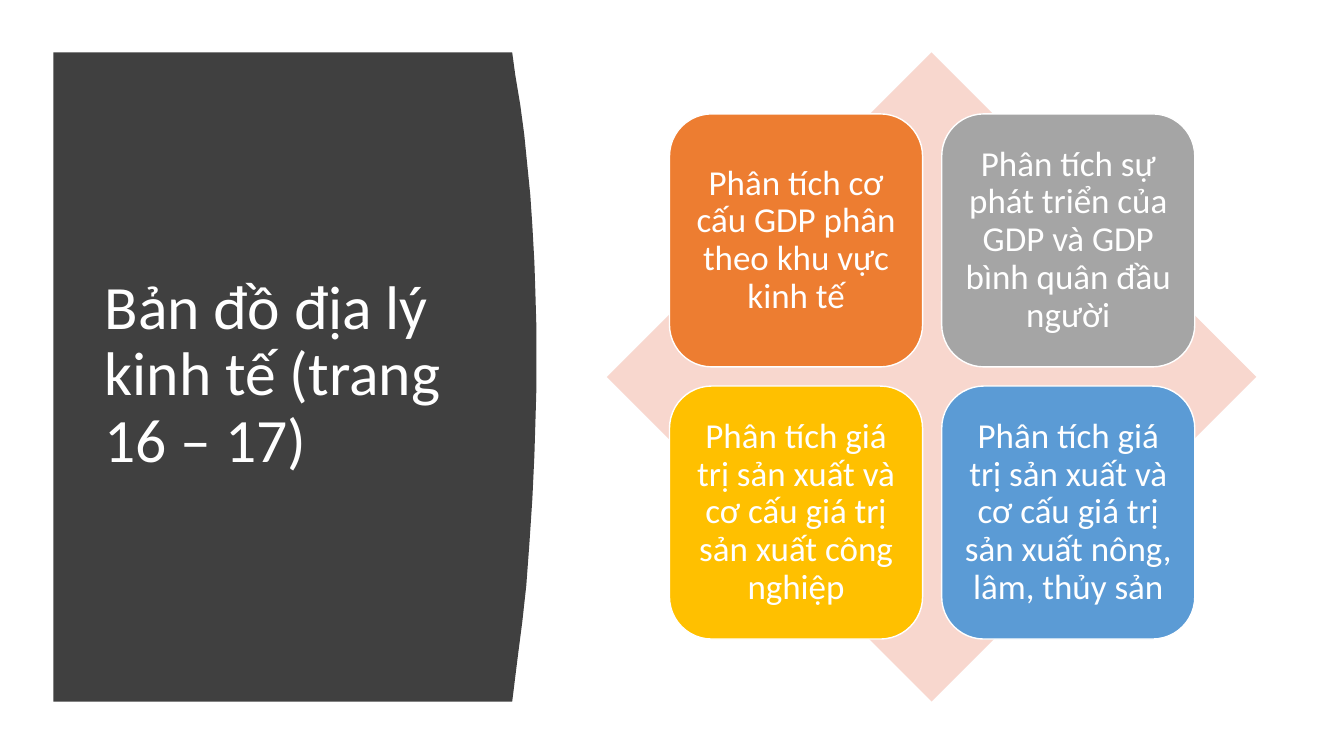
from pptx import Presentation
from pptx.dml.color import RGBColor
from pptx.enum.shapes import MSO_SHAPE
from pptx.enum.text import MSO_ANCHOR, PP_ALIGN
from pptx.util import Inches, Pt

DIAMOND = MSO_SHAPE.DIAMOND
ROUNDED = MSO_SHAPE.ROUNDED_RECTANGLE
MIDDLE = MSO_ANCHOR.MIDDLE
LEFT, CENTER = PP_ALIGN.LEFT, PP_ALIGN.CENTER

WHITE = RGBColor(0xFF, 0xFF, 0xFF)
CHARCOAL = RGBColor(0x40, 0x40, 0x40)
BLUSH = RGBColor(0xF8, 0xD7, 0xCE)
ORANGE = RGBColor(0xED, 0x7D, 0x31)
GRAY = RGBColor(0xA5, 0xA5, 0xA5)
GOLD = RGBColor(0xFF, 0xC0, 0x00)
BLUE = RGBColor(0x5B, 0x9B, 0xD5)

PANEL_OUTLINE = [
    (0.53, 0.52), (5.08, 0.52), (5.11, 0.74), (5.16, 1.04), (5.2, 1.34),
    (5.23, 1.64), (5.26, 1.94), (5.28, 2.24), (5.3, 2.6), (5.31, 2.9),
    (5.32, 3.25), (5.32, 3.85), (5.31, 4.2), (5.3, 4.52), (5.28, 4.95),
    (5.25, 5.4), (5.22, 5.81), (5.18, 6.17), (5.14, 6.48), (5.11, 6.72),
    (5.08, 6.96), (0.53, 6.96),
]
TOPICS = [
    ("Phân tích cơ cấu GDP phân theo khu vực kinh tế", ORANGE),
    ("Phân tích sự phát triển của GDP và GDP bình quân đầu người", GRAY),
    ("Phân tích giá trị sản xuất và cơ cấu giá trị sản xuất công nghiệp", GOLD),
    ("Phân tích giá trị sản xuất và cơ cấu giá trị sản xuất nông, lâm, thủy sản", BLUE),
]
GRID_LEFT, GRID_TOP, CARD_SIZE, CARD_PITCH = 6.64, 1.13, 2.51, 2.7


class SlideBuilder:
    """Draws styled elements on the current slide."""

    font_name = "Calibri"
    text_color = WHITE
    line_spacing = 0.9

    def __init__(self, slide):
        self.slide = slide

    def paint(self, shape, fill, line=None):
        """Set the fill and the outline of a shape."""
        shape.shadow.inherit = False
        shape.fill.solid()
        shape.fill.fore_color.rgb = fill
        if line is None:
            shape.line.fill.background()
        else:
            shape.line.color.rgb = line
            shape.line.width = Pt(1)

    def add_text(self, shape, text, size, alignment, vertical_margin):
        """Put one styled paragraph in a shape."""
        frame = shape.text_frame
        frame_format = {
            "word_wrap": True,
            "vertical_anchor": MIDDLE,
            "margin_left": Inches(0.1),
            "margin_right": Inches(0.1),
            "margin_top": Inches(vertical_margin),
            "margin_bottom": Inches(vertical_margin),
        }
        for name, value in frame_format.items():
            setattr(frame, name, value)
        paragraph = frame.paragraphs[0]
        paragraph.alignment = alignment
        paragraph.line_spacing = self.line_spacing
        run = paragraph.add_run()
        run.text = text
        run.font.name = self.font_name
        run.font.size = Pt(size)
        run.font.color.rgb = self.text_color

    def outline(self, points, fill):
        """Draw a closed outline through points in inches."""
        start, *others = [(Inches(x), Inches(y)) for x, y in points]
        builder = self.slide.shapes.build_freeform(*start)
        builder.add_line_segments(others, close=True)
        self.paint(builder.convert_to_shape(), fill)

    def preset(self, kind, left, top, width, height, fill, line=None):
        """Draw a preset shape and return it."""
        box = map(Inches, (left, top, width, height))
        shape = self.slide.shapes.add_shape(kind, *box)
        self.paint(shape, fill, line)
        return shape

    def title(self, text, left, top, width, height):
        """Draw the slide heading."""
        box = map(Inches, (left, top, width, height))
        shape = self.slide.shapes.add_textbox(*box)
        self.add_text(shape, text, 44, LEFT, 0.05)

    def card(self, text, left, top, size, fill):
        """Draw a rounded square with its topic."""
        shape = self.preset(ROUNDED, left, top, size, size, fill, WHITE)
        self.add_text(shape, text, 25, CENTER, 0.1)


def main():
    """Build and save the slide."""
    presentation = Presentation()
    presentation.slide_width = Inches(13.33)
    presentation.slide_height = Inches(7.5)
    builder = SlideBuilder(presentation.slides.add_slide(presentation.slide_layouts[6]))

    builder.outline(PANEL_OUTLINE, CHARCOAL)
    builder.title("Bản đồ địa lý kinh tế (trang 16 – 17)", 0.94, 1.11, 3.74, 5.24)
    builder.preset(DIAMOND, 6.02, 0.52, 6.44, 6.44, BLUSH)
    for index, (topic, color) in enumerate(TOPICS):
        row, column = divmod(index, 2)
        left = GRID_LEFT + column * CARD_PITCH
        top = GRID_TOP + row * CARD_PITCH
        builder.card(topic, left, top, CARD_SIZE, color)

    presentation.save("out.pptx")


if __name__ == "__main__":
    main()
